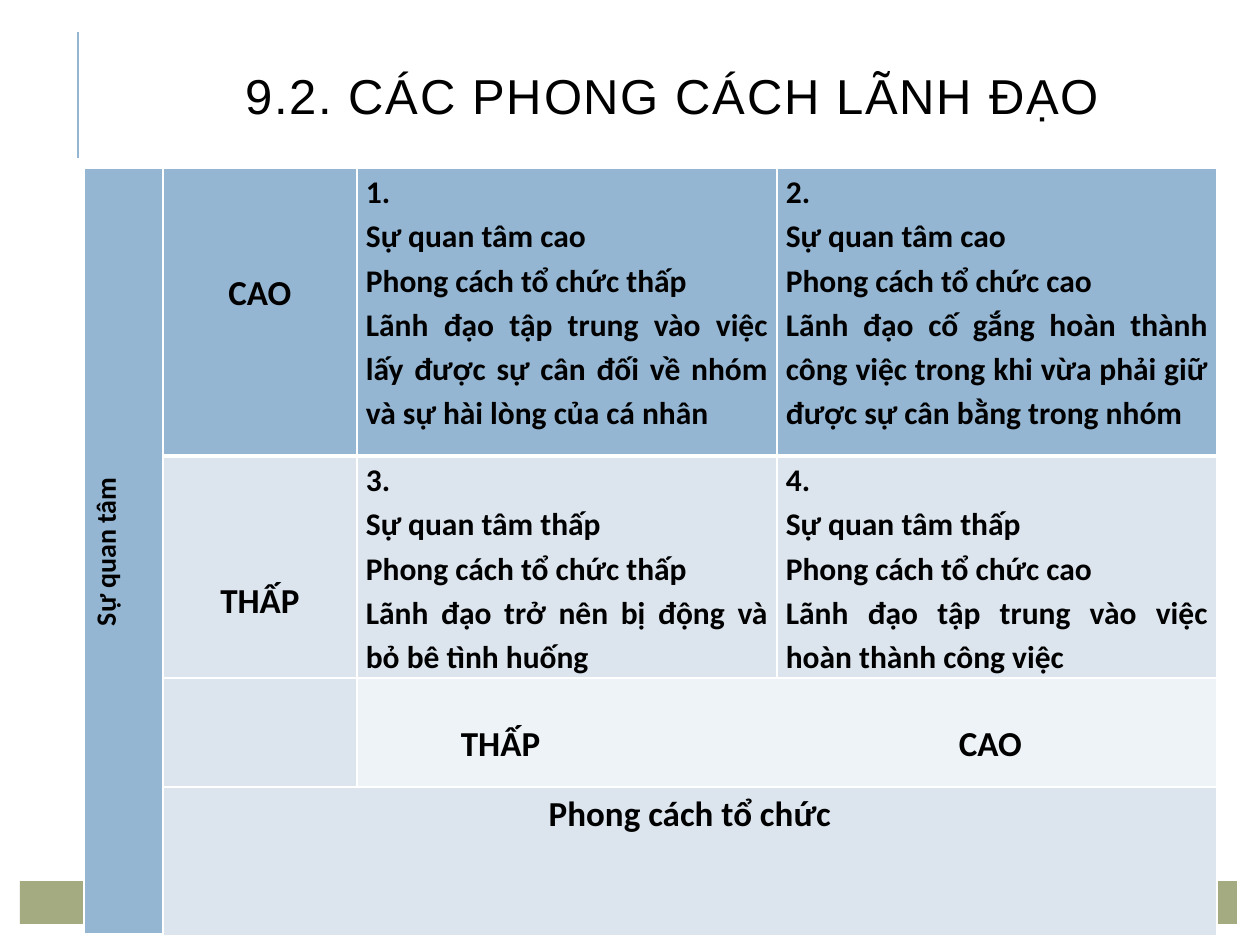
from lxml.etree import SubElement
from pptx import Presentation
from pptx.dml.color import RGBColor
from pptx.enum.shapes import MSO_CONNECTOR, MSO_SHAPE
from pptx.enum.text import MSO_ANCHOR, PP_ALIGN
from pptx.oxml.ns import qn
from pptx.util import Emu, Pt

EMU_PER_PX = 914400 / 126
BLUE, PALE, PALER, OLIVE = "94B6D2", "DCE5EE", "EEF3F7", "A5AB81"
BLACK, WHITE = "000000", "FFFFFF"
COLUMN_WIDTHS = [79, 194, 420, 440]
ROW_HEIGHTS = [288, 222, 109, 148]
STYLES = [
    (0, 2, BLUE, ["1.", "Sự quan tâm cao", "Phong cách tổ chức thấp",
                  "Lãnh đạo tập trung vào việc lấy được sự cân đối về nhóm và sự hài lòng của cá nhân"]),
    (0, 3, BLUE, ["2.", "Sự quan tâm cao", "Phong cách tổ chức cao",
                  "Lãnh đạo cố gắng hoàn thành công việc trong khi vừa phải giữ được sự cân bằng trong nhóm"]),
    (1, 2, PALE, ["3.", "Sự quan tâm thấp", "Phong cách tổ chức thấp",
                  "Lãnh đạo trở nên bị động và bỏ bê tình huống"]),
    (1, 3, PALE, ["4.", "Sự quan tâm thấp", "Phong cách tổ chức cao",
                  "Lãnh đạo tập trung vào việc hoàn thành công việc"]),
]


def px(length):
    """Turn pixels into EMU."""
    return Emu(round(length * EMU_PER_PX))


def color(value):
    """Turn a hex string into a colour."""
    return RGBColor.from_string(value)


def add_run(paragraph, text, size, font, bold=False):
    """Add a black run to a paragraph."""
    run = paragraph.add_run()
    run.text = text
    run.font.size = Pt(size)
    run.font.name = font
    run.font.bold = bold
    run.font.color.rgb = color(BLACK)
    return run


def add_accent_line(slide):
    """Draw the upright line beside the title."""
    line = slide.shapes.add_connector(MSO_CONNECTOR.STRAIGHT, px(78), px(158), px(78), px(32))
    line.line.color.rgb = color(BLUE)
    line.line.width = Pt(1.5)
    SubElement(line._element.spPr, qn("a:effectLst"))


def add_footer_band(slide):
    """Draw the band at the foot of the slide."""
    band = slide.shapes.add_shape(MSO_SHAPE.RECTANGLE, px(20), px(881), px(1217), px(43))
    band.shadow.inherit = False
    band.fill.solid()
    band.fill.fore_color.rgb = color(OLIVE)
    band.line.fill.background()


def add_title(slide, text):
    """Add the spaced, centred title."""
    frame = slide.shapes.add_textbox(px(106), px(23), px(1133), px(155)).text_frame
    frame.word_wrap = True
    frame.vertical_anchor = MSO_ANCHOR.MIDDLE
    paragraph = frame.paragraphs[0]
    paragraph.alignment = PP_ALIGN.CENTER
    paragraph.line_spacing = 0.8
    run = add_run(paragraph, text, 28, "Arial")
    run.font._element.set("spc", "100")


def style_cell(cell, fill, bottom_width):
    """Give a cell its fill, margins and white borders."""
    properties = cell._tc.get_or_add_tcPr()
    for side in ("lnL", "lnR", "lnT", "lnB"):
        width = bottom_width if side == "lnB" else 1
        border = SubElement(properties, qn(f"a:{side}"), w=str(Pt(width)))
        SubElement(SubElement(border, qn("a:solidFill")), qn("a:srgbClr"), val=WHITE)
    cell.fill.solid()
    cell.fill.fore_color.rgb = color(fill)
    cell.margin_left = cell.margin_right = px(9)
    cell.margin_top = cell.margin_bottom = 0


def write_cell(cell, lines, size, alignment=PP_ALIGN.CENTER, top=0):
    """Write bold paragraphs into a cell below a top margin."""
    cell.margin_top = px(top)
    frame = cell.text_frame
    for index, line in enumerate(lines):
        paragraph = frame.add_paragraph() if index else frame.paragraphs[0]
        paragraph.alignment = alignment
        paragraph.line_spacing = 1.15
        add_run(paragraph, line, size, "Calibri", bold=True)


def set_tabs(paragraph, positions):
    """Set left tab stops on a paragraph."""
    tabs = SubElement(paragraph._p.get_or_add_pPr(), qn("a:tabLst"))
    for position in positions:
        SubElement(tabs, qn("a:tab"), pos=str(px(position)), algn="l")


def add_style_grid(slide):
    """Add the grid of leadership styles with its two axes."""
    grid = slide.shapes.add_table(len(ROW_HEIGHTS), len(COLUMN_WIDTHS), px(84), px(168),
                                  px(sum(COLUMN_WIDTHS)), px(sum(ROW_HEIGHTS))).table
    for column, width in zip(grid.columns, COLUMN_WIDTHS):
        column.width = px(width)
    for row, height in zip(grid.rows, ROW_HEIGHTS):
        row.height = px(height)
    for row, fill in enumerate([BLUE, PALE, PALER, PALE]):
        for column in range(len(COLUMN_WIDTHS)):
            cell_fill = BLUE if column == 0 else PALE if column == 1 and row else fill
            style_cell(grid.cell(row, column), cell_fill, 1 if row else 3)
    care_axis, level_axis, structure_axis = grid.cell(0, 0), grid.cell(2, 2), grid.cell(3, 1)
    care_axis.merge(grid.cell(3, 0))
    level_axis.merge(grid.cell(2, 3))
    structure_axis.merge(grid.cell(3, 3))
    care_axis._tc.get_or_add_tcPr().set("vert", "vert270")
    write_cell(care_axis, ["Sự quan tâm"], 16)
    write_cell(grid.cell(0, 1), ["CAO"], 20, top=98)
    write_cell(grid.cell(1, 1), ["THẤP"], 20, top=118)
    for row, column, _, lines in STYLES:
        write_cell(grid.cell(row, column), lines, 18, PP_ALIGN.JUSTIFY)
    write_cell(level_axis, ["\tTHẤP\tCAO"], 20, PP_ALIGN.LEFT, top=39)
    set_tabs(level_axis.text_frame.paragraphs[0], [95, 593])
    write_cell(structure_axis, ["Phong cách tổ chức"], 20)


def main():
    """Build and save the slide."""
    deck = Presentation()
    deck.slide_width, deck.slide_height = px(1260), px(945)
    slide = deck.slides.add_slide(deck.slide_layouts[6])
    add_accent_line(slide)
    add_footer_band(slide)
    add_title(slide, "9.2. CÁC PHONG CÁCH LÃNH ĐẠO")
    add_style_grid(slide)
    deck.save("out.pptx")


if __name__ == "__main__":
    main()
